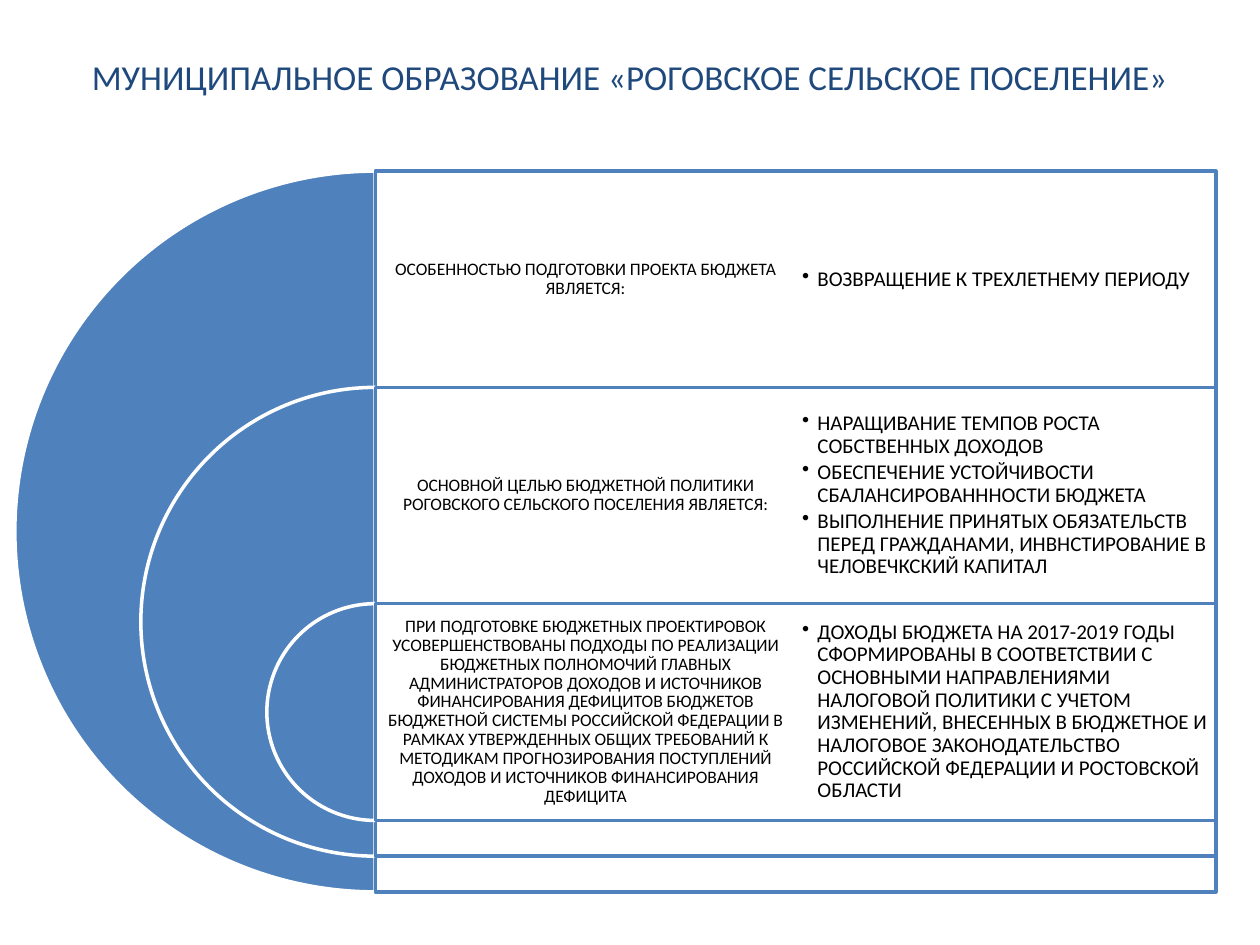
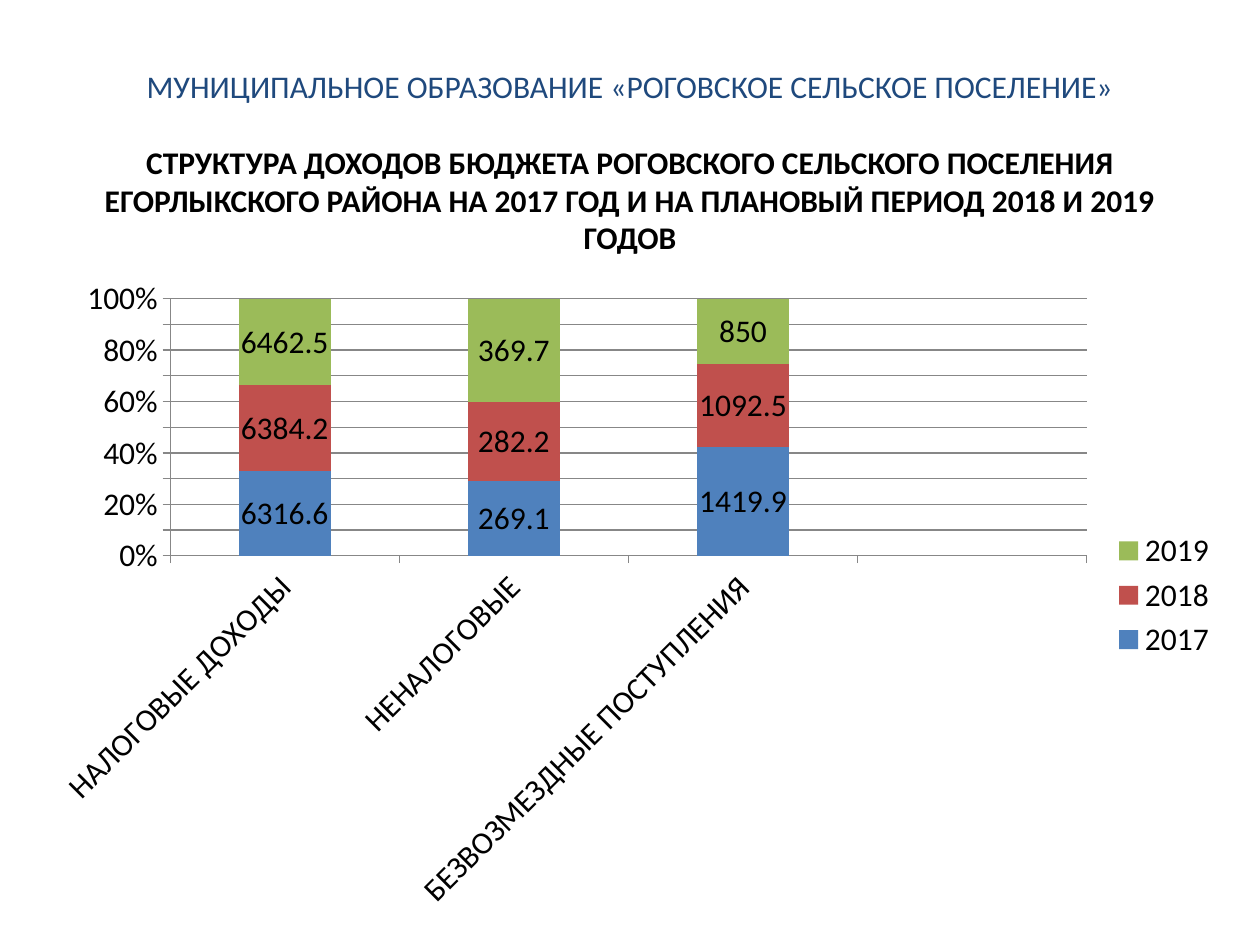
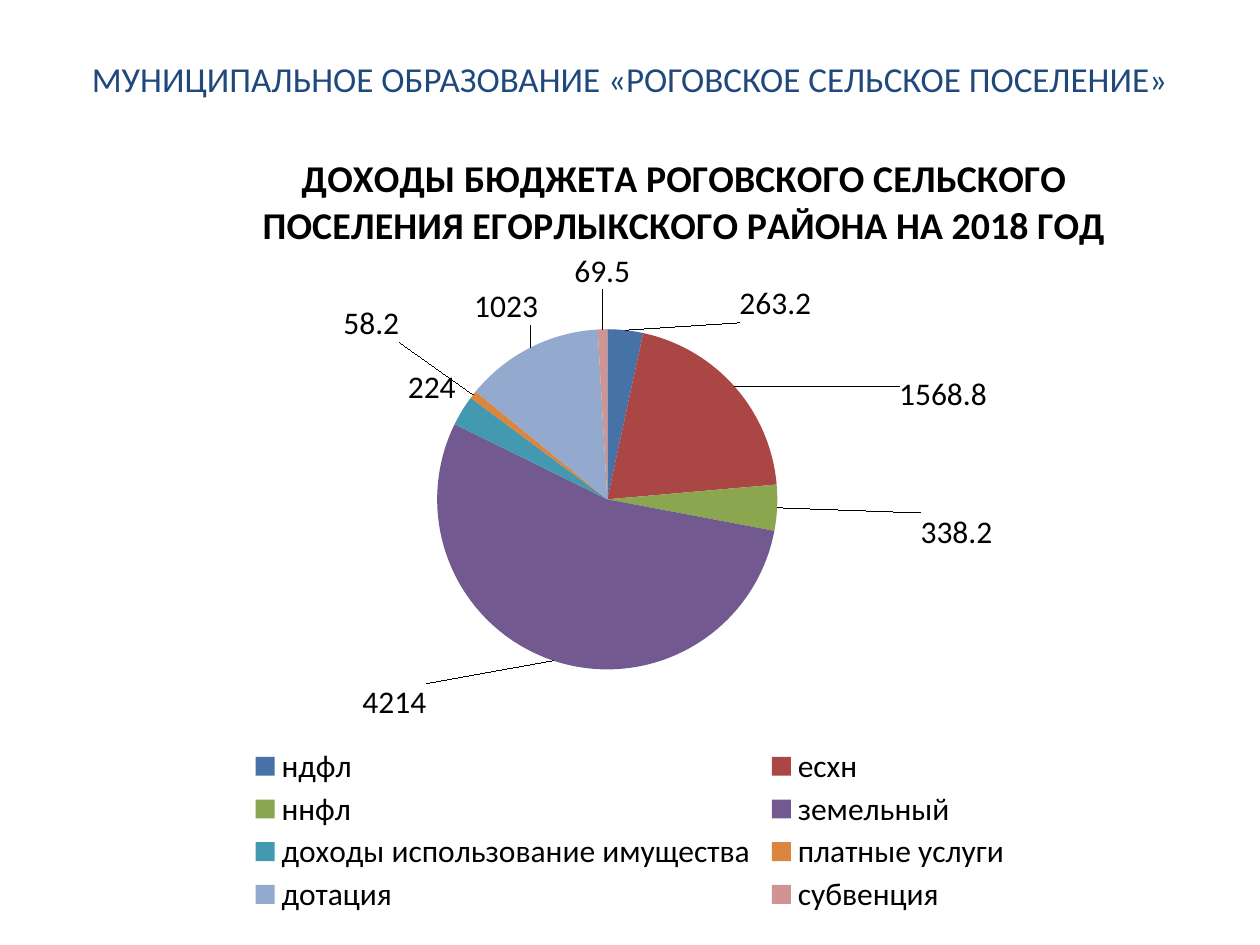
from dataclasses import dataclass

from lxml.etree import SubElement as Sub
from pptx import Presentation
from pptx.chart.data import CategoryChartData as Data
from pptx.dml.color import RGBColor as Rgb
from pptx.enum.chart import XL_CHART_TYPE as Kind
from pptx.enum.chart import XL_LABEL_POSITION as Spot
from pptx.enum.chart import XL_LEGEND_POSITION as Side
from pptx.enum.chart import XL_TICK_MARK as Tick
from pptx.enum.shapes import MSO_SHAPE as Form
from pptx.enum.text import MSO_ANCHOR as Anchor
from pptx.enum.text import PP_ALIGN as Align
from pptx.oxml import parse_xml
from pptx.oxml.ns import qn
from pptx.util import Cm, Pt


@dataclass(frozen=True)
class Theme:
    font: str = "Calibri"
    navy: str = "1F497D"
    blue: str = "4F81BD"
    ink: str = "000000"
    white: str = "FFFFFF"
    grid: str = "878787"
    bars: tuple = ("4F81BD", "C0504D", "9BBB59")
    pie: tuple = ("4672A8", "AA4744", "8AA64F", "725990",
                  "4299B0", "DC853E", "93A9CE", "D09493")
    head: int = 20
    body: int = 18
    item: int = 12
    note: int = 10
    big: float = 21.6


T = Theme()
HEAD = "МУНИЦИПАЛЬНОЕ ОБРАЗОВАНИЕ «РОГОВСКОЕ СЕЛЬСКОЕ ПОСЕЛЕНИЕ»"

GOALS = [
    ("ОСОБЕННОСТЬЮ ПОДГОТОВКИ ПРОЕКТА БЮДЖЕТА ЯВЛЯЕТСЯ:",
     ["ВОЗВРАЩЕНИЕ К ТРЕХЛЕТНЕМУ ПЕРИОДУ"]),
    ("ОСНОВНОЙ ЦЕЛЬЮ БЮДЖЕТНОЙ ПОЛИТИКИ РОГОВСКОГО СЕЛЬСКОГО ПОСЕЛЕНИЯ "
     "ЯВЛЯЕТСЯ:",
     ["НАРАЩИВАНИЕ ТЕМПОВ РОСТА СОБСТВЕННЫХ ДОХОДОВ",
      "ОБЕСПЕЧЕНИЕ УСТОЙЧИВОСТИ СБАЛАНСИРОВАНННОСТИ БЮДЖЕТА",
      "ВЫПОЛНЕНИЕ ПРИНЯТЫХ ОБЯЗАТЕЛЬСТВ ПЕРЕД ГРАЖДАНАМИ, "
      "ИНВНСТИРОВАНИЕ В ЧЕЛОВЕЧКСКИЙ КАПИТАЛ"]),
    ("ПРИ ПОДГОТОВКЕ БЮДЖЕТНЫХ ПРОЕКТИРОВОК УСОВЕРШЕНСТВОВАНЫ ПОДХОДЫ ПО "
     "РЕАЛИЗАЦИИ БЮДЖЕТНЫХ ПОЛНОМОЧИЙ ГЛАВНЫХ АДМИНИСТРАТОРОВ ДОХОДОВ И "
     "ИСТОЧНИКОВ ФИНАНСИРОВАНИЯ ДЕФИЦИТОВ БЮДЖЕТОВ БЮДЖЕТНОЙ СИСТЕМЫ "
     "РОССИЙСКОЙ ФЕДЕРАЦИИ В РАМКАХ УТВЕРЖДЕННЫХ ОБЩИХ ТРЕБОВАНИЙ К "
     "МЕТОДИКАМ ПРОГНОЗИРОВАНИЯ ПОСТУПЛЕНИЙ ДОХОДОВ И ИСТОЧНИКОВ "
     "ФИНАНСИРОВАНИЯ ДЕФИЦИТА",
     ["ДОХОДЫ БЮДЖЕТА НА 2017-2019 ГОДЫ СФОРМИРОВАНЫ В СООТВЕТСТВИИ С "
      "ОСНОВНЫМИ НАПРАВЛЕНИЯМИ НАЛОГОВОЙ ПОЛИТИКИ С УЧЕТОМ ИЗМЕНЕНИЙ, "
      "ВНЕСЕННЫХ В БЮДЖЕТНОЕ И НАЛОГОВОЕ ЗАКОНОДАТЕЛЬСТВО РОССИЙСКОЙ "
      "ФЕДЕРАЦИИ И РОСТОВСКОЙ ОБЛАСТИ"]),
]

PLAN = ("СТРУКТУРА ДОХОДОВ БЮДЖЕТА РОГОВСКОГО СЕЛЬСКОГО ПОСЕЛЕНИЯ "
        "ЕГОРЛЫКСКОГО РАЙОНА НА 2017 ГОД И НА ПЛАНОВЫЙ ПЕРИОД 2018 И 2019 "
        "ГОДОВ")
KINDS = ["НАЛОГОВЫЕ ДОХОДЫ", "НЕНАЛОГОВЫЕ", "БЕЗВОЗМЕЗДНЫЕ ПОСТУПЛЕНИЯ", ""]
YEARS = {"2017": (6316.6, 269.1, 1419.9, None),
         "2018": (6384.2, 282.2, 1092.5, None),
         "2019": (6462.5, 369.7, 850, None)}

SUM = ("ДОХОДЫ БЮДЖЕТА РОГОВСКОГО СЕЛЬСКОГО ПОСЕЛЕНИЯ ЕГОРЛЫКСКОГО РАЙОНА "
       "НА 2018 ГОД")
# Name, value and shift of the label as a share of the chart
PARTS = [("ндфл", 263.2, (0.1, 0)),
         ("есхн", 1568.8, (0.14, 0.04)),
         ("ннфл", 338.2, (0.12, 0.03)),
         ("земельный", 4214, (-0.11, 0.02)),
         ("доходы использование имущества", 224, None),
         ("платные услуги", 58.2, (-0.06, -0.06)),
         ("дотация", 1023, (0.01, -0.02)),
         ("субвенция", 69.5, (0, -0.04))]


def tint(font, size, color=T.ink, bold=False):
    font.name, font.size, font.bold = T.font, Pt(size), bold
    font.color.rgb = Rgb.from_string(color)


def write(slide, box, lines, size, color=T.ink, align=Align.CENTER, pad=0.1):
    """Add a centred-in-height text box with one paragraph a line."""
    frame = slide.shapes.add_textbox(*map(Cm, box)).text_frame
    frame.word_wrap, frame.vertical_anchor = True, Anchor.MIDDLE
    frame.margin_left = frame.margin_right = Cm(pad)
    frame.margin_top = frame.margin_bottom = Cm(pad)
    for i, line in enumerate(lines):
        para = frame.add_paragraph() if i else frame.paragraphs[0]
        para.text, para.alignment = line, align
        tint(para.font, size, color)
    return frame.paragraphs


def title(slide, box, size=T.head, sub=None):
    lines = [HEAD, sub] if sub else [HEAD]
    paras = write(slide, box, lines, size, T.navy, pad=0.25)
    for para in paras[1:]:
        tint(para.font, size, bold=True)
        para.space_before = Pt(size * 1.2)


def block(slide, form, box, fill, line):
    shape = slide.shapes.add_shape(form, *map(Cm, box))
    shape.shadow.inherit = False
    shape.fill.solid()
    shape.fill.fore_color.rgb = Rgb.from_string(fill)
    shape.line.color.rgb = Rgb.from_string(line)
    shape.line.width = Pt(2)
    return shape


def rings(slide, box, rows):
    """Nested half discs on the left, nested panels on the right."""
    x, y, wide, tall = box
    step, trim = 4.36, 5.08
    mid = x + tall / 2
    half = (wide - tall / 2) / 2
    for i, (note, items) in enumerate(rows):
        top, size = y + i * step, tall - i * trim
        # Half disc
        disc = block(slide, Form.PIE, (mid - size / 2, top, size, size),
                     T.blue, T.white)
        disc.adjustments[0], disc.adjustments[1] = 54, 162
        # Panel
        panel = block(slide, Form.RECTANGLE, (mid, top, 2 * half, size),
                      T.white, T.blue)
        tone = panel.fill._xPr.find(".//" + qn("a:srgbClr"))
        Sub(tone, qn("a:alpha"), val="90000")
        # Heading and list
        paras = write(slide, (mid, top, half, step), [note], T.note)
        paras[0].line_spacing = 0.9
        for para in write(slide, (mid + half, top, half, step), items,
                          T.item, align=Align.LEFT, pad=0.13):
            para.line_spacing, para.space_after = 0.9, Pt(2)
            props = para._p.get_or_add_pPr()
            props.set("marL", str(Cm(0.31)))
            props.set("indent", str(-Cm(0.31)))
            Sub(props, qn("a:buChar"), char="•")


def place(node, index, x, y, wide=None, tall=None, edge=True, inner=False):
    """Give a chart part a fixed place, in shares of the chart."""
    for old in node.findall(qn("c:layout")):
        node.remove(old)
    lay = parse_xml('<c:layout xmlns:c="http://schemas.openxmlformats.org/'
                    'drawingml/2006/chart"><c:manualLayout/></c:layout>')
    tags = {"layoutTarget": "inner" if inner else None,
            "xMode": "edge" if edge else None,
            "yMode": "edge" if edge else None,
            "x": x, "y": y, "w": wide, "h": tall}
    for tag, val in tags.items():
        if val is not None:
            Sub(lay[0], qn("c:" + tag), val=str(val))
    node.insert(index, lay)


def graph(slide, box, kind, data, side, area):
    """Add a chart with its font, legend, labels and plot area set."""
    chart = slide.shapes.add_chart(kind, *map(Cm, box), data).chart
    tint(chart.font, T.body)
    chart.has_title = False
    chart.has_legend = True
    chart.legend.position, chart.legend.include_layout = side, False
    tint(chart.legend.font, T.body)
    for row in chart.plots[0].series:
        row.data_labels.show_value = True
        tint(row.data_labels.font, T.body)
    place(chart._chartSpace.chart.plotArea, 0, *area, inner=True)
    return chart


def stack(slide, box):
    data = Data()
    data.categories = KINDS
    for year, vals in YEARS.items():
        data.add_series(year, vals)
    chart = graph(slide, box, Kind.COLUMN_STACKED_100, data, Side.RIGHT,
                  (0.11, 0.05, 0.77, 0.39))
    plot = chart.plots[0]
    plot.gap_width, plot.overlap = 150, 100
    plot.vary_by_categories = False
    for row, color in zip(plot.series, T.bars):
        row.format.fill.solid()
        row.format.fill.fore_color.rgb = Rgb.from_string(color)
    # Axes
    cat, val = chart.category_axis, chart.value_axis
    val.has_major_gridlines = True
    val.minimum_scale, val.maximum_scale, val.major_unit = 0, 1, 0.1
    for axis in (cat, val):
        axis.major_tick_mark = Tick.OUTSIDE
        tint(axis.tick_labels.font, T.body)
    for part in (cat, val, val.major_gridlines):
        part.format.line.color.rgb = Rgb.from_string(T.grid)
        part.format.line.width = Pt(0.75)
    val.tick_labels.number_format = "0%"
    val.tick_labels.number_format_is_linked = False
    turn = cat._element.find(qn("c:txPr")).find(qn("a:bodyPr"))
    turn.set("rot", "-2700000")
    turn.set("vert", "horz")


def pie(slide, box):
    names, vals, shifts = zip(*PARTS)
    data = Data()
    data.categories = names
    data.add_series(SUM, vals)
    chart = graph(slide, box, Kind.PIE, data, Side.BOTTOM,
                  (0.33, 0.25, 0.3, 0.43))
    chart.plots[0].vary_by_categories = True
    place(chart.legend._element, 1, 0.16, 0.77, 0.68, 0.22)
    # Heading
    chart.has_title = True
    para = chart.chart_title.text_frame.paragraphs[0]
    para.text = SUM
    tint(para.font, T.big, bold=True)
    place(chart.chart_title._element, 1, 0.17, 0.02)
    # Slices and their labels
    row = chart.plots[0].series[0]
    row.data_labels.position = Spot.OUTSIDE_END
    for i, (color, shift) in enumerate(zip(T.pie, shifts)):
        point = row.points[i]
        point.format.fill.solid()
        point.format.fill.fore_color.rgb = Rgb.from_string(color)
        if shift:
            point.data_label.position = Spot.OUTSIDE_END
            tint(point.data_label.font, T.body)
            label = row._element.findall(".//" + qn("c:dLbl"))[-1]
            place(label, 1, *shift, edge=False)


def main():
    deck = Presentation()
    deck.slide_width, deck.slide_height = Cm(25.4), Cm(19.05)
    goals, plan, total = (deck.slides.add_slide(deck.slide_layouts[6])
                          for _ in range(3))
    # Goals of the budget
    title(goals, (1.27, 0.76, 22.86, 1.55))
    rings(goals, (0.3, 3.45, 24.21, 14.53), GOALS)
    # Income by year
    title(plan, (1.27, 1.2, 22.86, 4.12), T.body, PLAN)
    stack(plan, (0.79, 5.36, 24, 13.28))
    # Income in 2018
    title(total, (1.27, 0.76, 22.86, 1.63))
    pie(total, (1.27, 2.59, 22.86, 16.08))
    deck.save("out.pptx")


if __name__ == "__main__":
    main()
